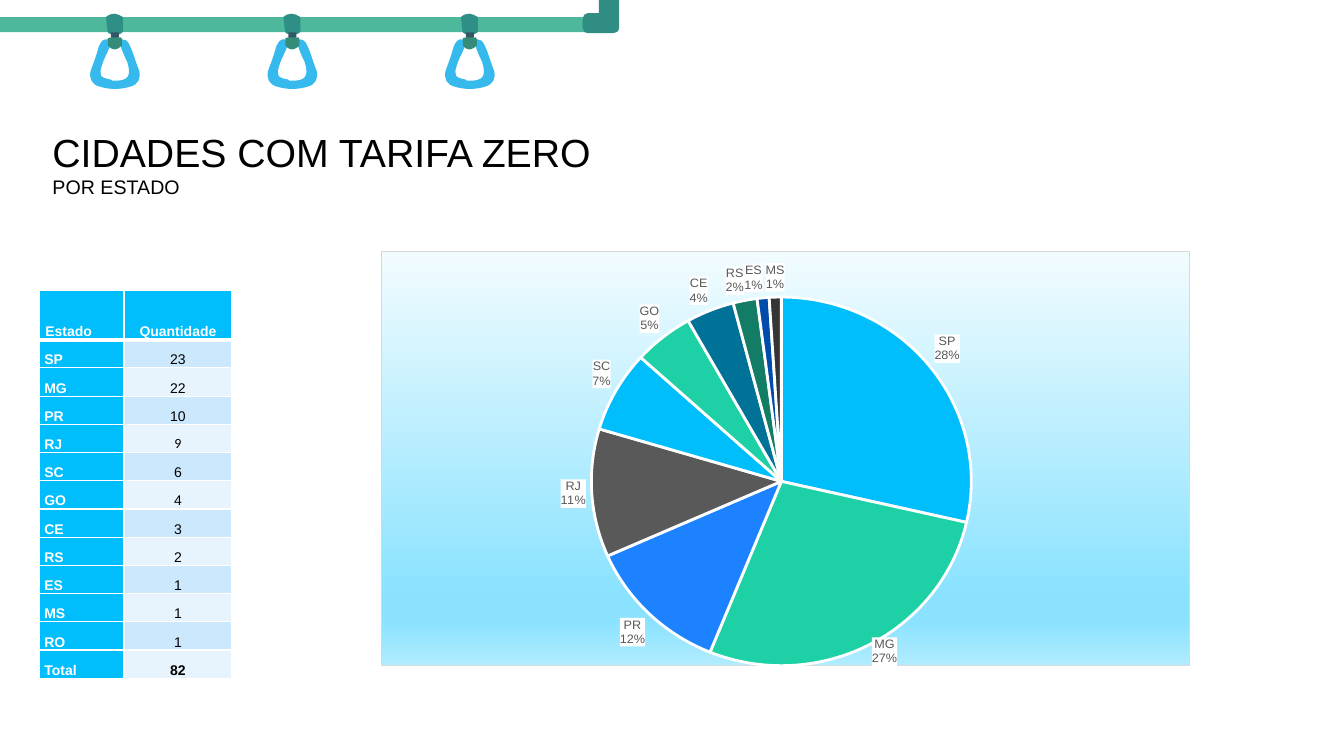
from lxml import etree
from pptx import Presentation
from pptx import util as u
from pptx.chart import data as cd
from pptx.dml.color import RGBColor
from pptx.enum import chart as ch, shapes, text
from pptx.oxml import parse_xml
from pptx.oxml.ns import nsdecls, qn

BLACK, WHITE = RGBColor(0, 0, 0), RGBColor(255, 255, 255)
GRAY, DARK = RGBColor(0x59, 0x59, 0x59), RGBColor(0x35, 0x35, 0x35)
CYAN, MINT = RGBColor(0x00, 0xBD, 0xFB), RGBColor(0x1E, 0xD0, 0xA6)
BLUE, TEAL = RGBColor(0x1C, 0x82, 0xFF), RGBColor(0x00, 0x71, 0x97)
GREEN, NAVY = RGBColor(0x12, 0x7D, 0x64), RGBColor(0x00, 0x4C, 0xAA)
PALE, LIGHT = RGBColor(0xCC, 0xE8, 0xFD), RGBColor(0xE7, 0xF4, 0xFE)
RAIL, CLAMP = RGBColor(0x4E, 0xB8, 0x9C), RGBColor(0x2E, 0x8F, 0x87)
NECK, LOOP = RGBColor(0x33, 0x57, 0x64), RGBColor(0x36, 0xB9, 0xEC)
KNOT, ELBOW = RGBColor(0x34, 0x8C, 0x79), RGBColor(0x2F, 0x8D, 0x83)

HEADS = ("Estado", "Quantidade")
STATES = [("SP", 23), ("MG", 22), ("PR", 10), ("RJ", 9), ("SC", 6), ("GO", 4),
          ("CE", 3), ("RS", 2), ("ES", 1), ("MS", 1), ("RO", 1)]
TOTAL = sum(n for _, n in STATES)
SLICES = [CYAN, MINT, BLUE, GRAY, CYAN, MINT, TEAL, GREEN, NAVY, DARK]
TITLE = [("CIDADES COM TARIFA ZERO", 28), ("POR ESTADO", 14)]

STRAP = [
    (CLAMP, (1.07, .32), [
        (1.06, .27, 1.06, .22, 1.05, .17), (1.11, .12, 1.16, .13, 1.22, .17),
        (1.22, .21, 1.22, .25, 1.22, .28), (1.23, .32, 1.21, .33, 1.18, .34),
        (1.16, .34, 1.13, .34, 1.11, .34), (1.09, .34, 1.08, .33, 1.07, .32)]),
    (NECK, (1.1, .37), [
        (1.1, .32), (1.18, .32), (1.18, .37), (1.16, .39, 1.13, .39, 1.1, .37)]),
    (LOOP, (1.21, .39), [
        (1.27, .39, 1.28, .44, 1.3, .48), (1.33, .55, 1.35, .63, 1.38, .7),
        (1.4, .78, 1.37, .84, 1.29, .86), (1.19, .89, 1.09, .89, .99, .86),
        (.91, .84, .88, .78, .9, .7), (.93, .62, .96, .54, .98, .46),
        (1, .43, 1.01, .38, 1.07, .39), (1.09, .41, 1.09, .43, 1.09, .46),
        (1.07, .52, 1.03, .58, 1.01, .65), (.98, .75, .99, .77, 1.1, .79),
        (1.1, .79, 1.11, .8, 1.11, .8), (1.27, .81, 1.31, .76, 1.26, .61),
        (1.23, .55, 1.21, .5, 1.19, .44), (1.19, .42, 1.2, .4, 1.21, .39)]),
    (KNOT, (1.07, .45), [
        (1.07, .38), (1.1, .37), (1.2, .37), (1.21, .39), (1.21, .45),
        (1.16, .5, 1.12, .51, 1.07, .45)]),
]
JOINT = (ELBOW, (5.94, -.03), [
    (5.94, .13), (5.83, .13), (5.8, .13, 5.78, .16, 5.78, .19), (5.78, .28),
    (5.78, .31, 5.8, .33, 5.83, .33), (6.08, .33),
    (6.11, .33, 6.14, .31, 6.14, .28), (6.14, .13), (6.14, -.03)])
STEP, COUNT = 1.76, 3


def put(obj, vals):
    for key, val in vals.items():
        setattr(obj, key, val)


def style(font, size, color, bold=False, name="Arial"):
    put(font, dict(size=u.Pt(size), bold=bold, name=name))
    font.color.rgb = color


def paint(shape, color):
    shape.shadow.inherit = False
    shape.fill.solid()
    shape.fill.fore_color.rgb = color
    shape.line.fill.background()


def draw(group, part, shift=0):
    color, start, segs = part
    ends = [(u.Inches(x + shift), u.Inches(y)) for x, y in [start] + [s[-2:] for s in segs]]
    left, top = (min(axis) for axis in zip(*ends))
    form = group.shapes.build_freeform(*ends[0])
    form.add_line_segments(ends[1:], close=True)
    shape = form.convert_to_shape()
    paint(shape, color)
    for line, seg in zip(list(shape._element.iter(qn("a:lnTo"))), segs):
        if len(seg) == 6:
            line.tag = qn("a:cubicBezTo")
            for i in (0, 2):
                spot = etree.Element(qn("a:pt"), x=str(u.Inches(seg[i] + shift) - left),
                                     y=str(u.Inches(seg[i + 1]) - top))
                line.insert(i // 2, spot)


def edge(tag, width):
    return parse_xml(f'<a:{tag} {nsdecls("a")} w="{u.Pt(width)}"><a:solidFill>'
                     f'<a:srgbClr val="{WHITE}"/></a:solidFill></a:{tag}>')


def write(cell, words, fill, row, col):
    put(cell, dict(margin_left=u.Inches(.05), margin_right=u.Inches(.05), margin_top=0,
                   margin_bottom=0, vertical_anchor=text.MSO_ANCHOR.BOTTOM))
    cell.fill.solid()
    cell.fill.fore_color.rgb = fill
    para = cell.text_frame.paragraphs[0]
    put(para, dict(line_spacing=1.07, space_after=u.Pt(8),
                   alignment=text.PP_ALIGN.CENTER if col else text.PP_ALIGN.LEFT))
    if row == col == 0:
        para._p.get_or_add_pPr().set("indent", str(u.Inches(.01)))
    run = para.add_run()
    run.text = words
    plain = col == 1 and row > 0
    style(run.font, 10, BLACK if plain else WHITE, not plain or row == len(STATES) + 1,
          "Calibri" if words == "9" else "Arial")
    props = cell._tc.get_or_add_tcPr()
    for i, tag in enumerate(("lnL", "lnR", "lnT", "lnB")):
        props.insert(i, edge(tag, 3 if (row, tag) == (0, "lnB") else 1))


def table(slide):
    rows = [HEADS] + STATES + [("Total", TOTAL)]
    grid = slide.shapes.add_table(len(rows), 2, u.Inches(.39), u.Inches(2.88),
                                  u.Inches(1.91), u.Inches(3.84)).table
    put(grid, dict(first_row=False, horz_banding=False))
    for col, width in zip(grid.columns, (.84, 1.07)):
        col.width = u.Inches(width)
    for r, row in enumerate(rows):
        grid.rows[r].height = u.Inches(.28 if r else .49)
        for c, val in enumerate(row):
            fill = CYAN if r == 0 or c == 0 else (PALE if r % 2 else LIGHT)
            write(grid.cell(r, c), str(val), fill, r, c)


def pie(slide):
    data = cd.CategoryChartData()
    shown = STATES[:len(SLICES)]
    data.categories = [name for name, _ in shown]
    data.add_series("Series 1", [round(100 * n / TOTAL) for _, n in shown])
    chart = slide.shapes.add_chart(ch.XL_CHART_TYPE.PIE, u.Inches(3.78), u.Inches(2.49),
                                   u.Inches(8.02), u.Inches(4.24), data).chart
    put(chart, dict(has_title=False, has_legend=False))
    style(chart.font, 10, BLACK)
    plot = chart.plots[0]
    plot.vary_by_categories = True
    share = plot.series[0]
    for i, color in enumerate(SLICES):
        form = share.points[i].format
        form.fill.solid()
        form.fill.fore_color.rgb = color
        form.line.color.rgb = WHITE
        form.line.width = u.Pt(2)
    tags = share.data_labels
    put(tags, dict(show_value=True, show_percentage=False, show_category_name=True,
                   number_format='0"%"', number_format_is_linked=False,
                   position=ch.XL_LABEL_POSITION.OUTSIDE_END))
    style(tags.font, 9, GRAY)
    node = tags._element
    node.find(qn("c:txPr")).addprevious(parse_xml(
        f'<c:spPr {nsdecls("c", "a")}><a:solidFill><a:srgbClr val="{WHITE}"/>'
        '</a:solidFill></c:spPr>'))
    mark = etree.Element(qn("c:separator"))
    mark.text = "\n"
    last = node.find(qn("c:showBubbleSize"))
    if last is None:
        last = node.find(qn("c:showPercent"))
    last.addnext(mark)

    area = chart._chartSpace.xpath("c:chart/c:plotArea")[0]
    for old in area.findall(qn("c:layout")):
        area.remove(old)
    spots = "".join(f'<c:{k} val="{v}"/>' for k, v in (
        ("layoutTarget", "inner"), ("xMode", "edge"), ("yMode", "edge"),
        ("x", .02), ("y", .11), ("w", .95), ("h", .89)))
    area.insert(0, parse_xml(f'<c:layout {nsdecls("c")}><c:manualLayout>{spots}'
                             '</c:manualLayout></c:layout>'))
    stops = "".join(f'<a:gs pos="{p * 1000}"><a:srgbClr val="{c}"/></a:gs>' for p, c in (
        (0, "F2FCFF"), (83, "8AE2FF"), (89, "8AE2FF"), (100, "B1ECFF")))
    chart._chartSpace.find(qn("c:chart")).addnext(parse_xml(
        f'<c:spPr {nsdecls("c", "a")}><a:gradFill><a:gsLst>{stops}</a:gsLst>'
        f'<a:lin ang="5400000" scaled="0"/></a:gradFill><a:ln w="{u.Pt(.75)}">'
        '<a:solidFill><a:srgbClr val="D9D9D9"/></a:solidFill></a:ln></c:spPr>'))


def title(slide):
    frame = slide.shapes.add_textbox(u.Inches(.47), u.Inches(1.27),
                                     u.Inches(8.02), u.Inches(.71)).text_frame
    put(frame, dict(word_wrap=True, auto_size=text.MSO_AUTO_SIZE.SHAPE_TO_FIT_TEXT,
                    margin_left=u.Inches(.05), margin_right=u.Inches(.03),
                    margin_top=0, margin_bottom=0))
    para = frame.paragraphs[0]
    for i, (words, size) in enumerate(TITLE):
        if i:
            para.add_line_break()
        run = para.add_run()
        run.text = words
        style(run.font, size, BLACK)


def main():
    deck = Presentation()
    put(deck, dict(slide_width=u.Inches(13.33), slide_height=u.Inches(7.5)))
    slide = deck.slides.add_slide(deck.slide_layouts[6])
    group = slide.shapes.add_group_shape()
    paint(group.shapes.add_shape(shapes.MSO_SHAPE.RECTANGLE, u.Inches(-.04), u.Inches(.17),
                                 u.Inches(5.86), u.Inches(.15)), RAIL)
    for i in range(COUNT):
        for part in STRAP:
            draw(group, part, i * STEP)
    draw(group, JOINT)
    title(slide)
    table(slide)
    pie(slide)
    deck.save("out.pptx")


if __name__ == "__main__":
    main()
